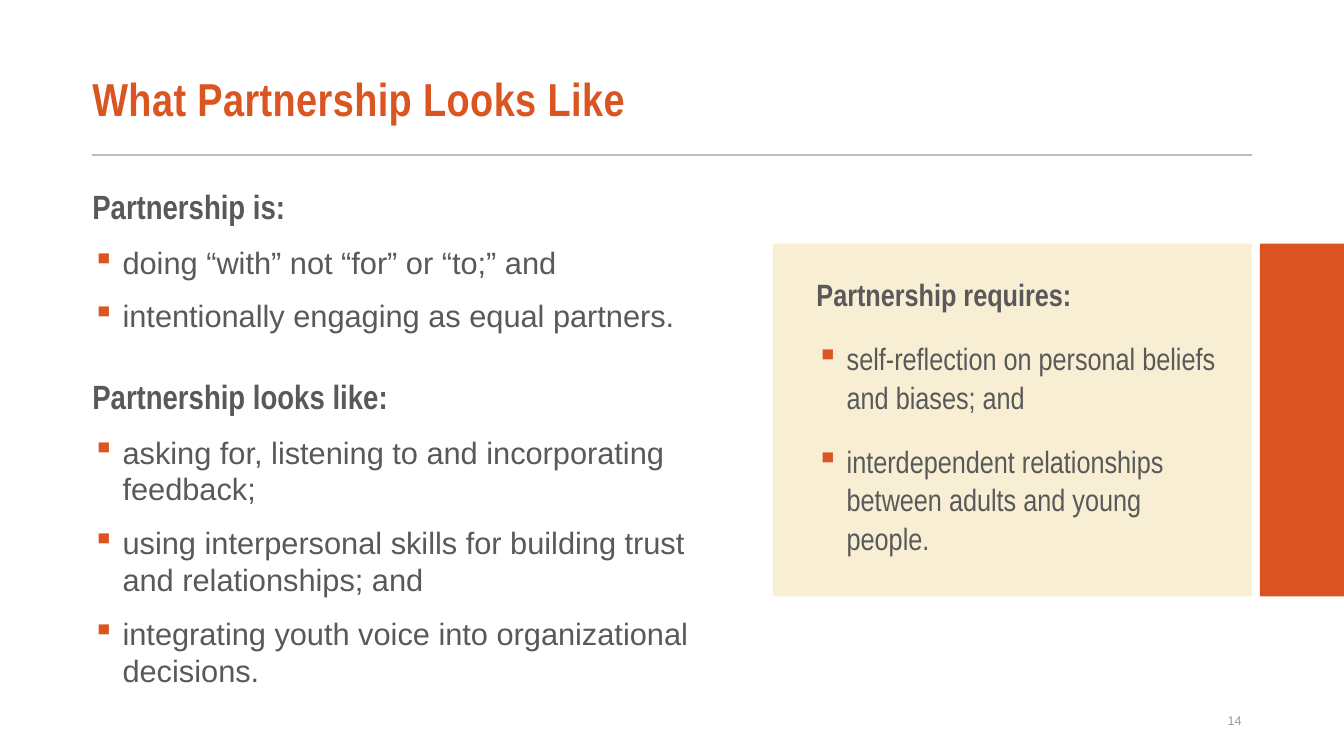
from dataclasses import dataclass

from lxml.etree import SubElement as Sub
from pptx import Presentation
from pptx.dml.color import RGBColor as RGB
from pptx.enum.shapes import MSO_CONNECTOR as Conn, MSO_SHAPE as Shape
from pptx.enum.text import MSO_ANCHOR as Anchor, PP_ALIGN as Align
from pptx.oxml.ns import qn
from pptx.util import Pt


@dataclass(frozen=True)
class Theme:
    accent: str = "DA5521"
    text: str = "595959"
    cream: str = "F7EED4"
    rule: str = "BDBDBD"
    faint: str = "9B9B9B"
    narrow: str = "Arial Narrow"
    sans: str = "Arial"
    title: int = 33
    head: int = 24
    body: int = 22
    small: int = 9


THEME = Theme()


def add_rule(slide, left, top, right):
    line = slide.shapes.add_connector(
        Conn.STRAIGHT, Pt(left), Pt(top), Pt(right), Pt(top))
    line.line.color.rgb = RGB.from_string(THEME.rule)
    line.line.width = Pt(1.5)
    Sub(line._element.spPr, qn("a:effectLst"))


def add_block(slide, left, top, width, height, color):
    block = slide.shapes.add_shape(
        Shape.RECTANGLE, Pt(left), Pt(top), Pt(width), Pt(height))
    block.shadow.inherit = False
    block.fill.solid()
    block.fill.fore_color.rgb = RGB.from_string(color)
    block.line.fill.background()


def add_box(slide, left, top, width, height, inset=0, anchor=Anchor.TOP):
    box = slide.shapes.add_textbox(Pt(left), Pt(top), Pt(width), Pt(height))
    frame = box.text_frame
    frame.word_wrap = True
    frame.vertical_anchor = anchor
    frame.margin_left = Pt(inset)
    return frame


def add_para(frame, text, size, font, color=THEME.text, bold=False,
             bullet=False, after=0, leading=1.0, align=Align.LEFT):
    """Fill the frame's empty first paragraph, or append a new one."""
    first = frame.paragraphs[0]
    para = frame.add_paragraph() if first.runs else first
    if bullet:
        props = para._p.get_or_add_pPr()
        props.set("marL", str(Pt(21.6)))
        props.set("indent", str(-Pt(21.6)))
        Sub(Sub(props, qn("a:buClr")), qn("a:srgbClr"), val=THEME.accent)
        Sub(props, qn("a:buChar"), char="▪")
    para.alignment = align
    para.line_spacing = leading
    para.space_after = Pt(after)
    run = para.add_run()
    run.text = text
    run.font.size = Pt(size)
    run.font.name = font
    run.font.bold = bold
    run.font.color.rgb = RGB.from_string(color)
    return run


def add_title(slide, text):
    frame = add_box(slide, 66, 39, 828, 68.4, anchor=Anchor.MIDDLE)
    run = add_para(frame, text, THEME.title, THEME.narrow, THEME.accent,
                   bold=True, leading=0.87)
    run._r.get_or_add_rPr().set("spc", "30")


def add_main(slide, groups):
    frame = add_box(slide, 66, 129.6, 468, 367.2)
    for head, items in groups:
        add_para(frame, head, THEME.head, THEME.narrow, bold=True, after=12)
        for item in items:
            gap = 30 if item == items[-1] and head != groups[-1][0] else 12
            add_para(frame, item, THEME.body, THEME.sans,
                     bullet=True, after=gap)


def add_aside(slide, head, items):
    add_block(slide, 552, 174, 342, 252, THEME.cream)
    add_block(slide, 900, 174, 60, 252, THEME.accent)
    frame = add_box(slide, 583.2, 192, 298.8, 288)
    style = dict(size=THEME.body, font=THEME.narrow, after=18, leading=1.05)
    add_para(frame, head, bold=True, **style)
    for item in items:
        add_para(frame, item, bullet=True, **style)


def add_number(slide, text):
    frame = add_box(slide, 678, 500.4, 216, 28.8, 7.2, Anchor.MIDDLE)
    add_para(frame, text, THEME.small, THEME.sans, THEME.faint,
             align=Align.RIGHT)


def main():
    deck = Presentation()
    deck.slide_width, deck.slide_height = Pt(960), Pt(540)
    slide = deck.slides.add_slide(deck.slide_layouts[6])
    add_rule(slide, 66, 111, 894)
    add_title(slide, "What Partnership Looks Like")
    add_main(slide, [
        ("Partnership is:", [
            "doing “with” not “for” or “to;” and",
            "intentionally engaging as equal partners.",
        ]),
        ("Partnership looks like:", [
            "asking for, listening to and incorporating feedback;",
            "using interpersonal skills for building trust and relationships; and",
            "integrating youth voice into organizational decisions.",
        ]),
    ])
    add_aside(slide, "Partnership requires:", [
        "self-reflection on personal beliefs and biases; and",
        "interdependent relationships between adults and young people.",
    ])
    add_number(slide, "14")
    deck.save("out.pptx")


if __name__ == "__main__":
    main()
